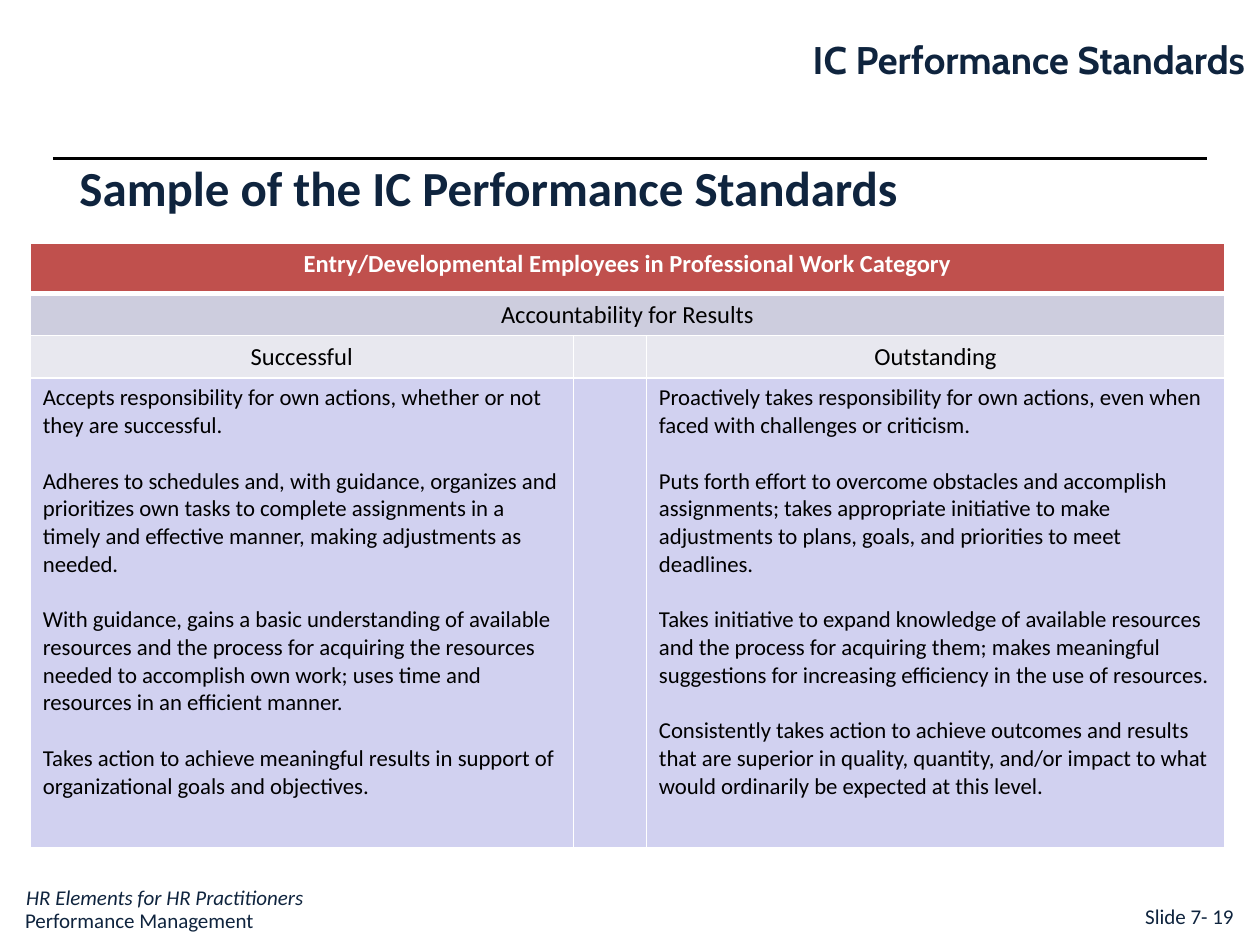
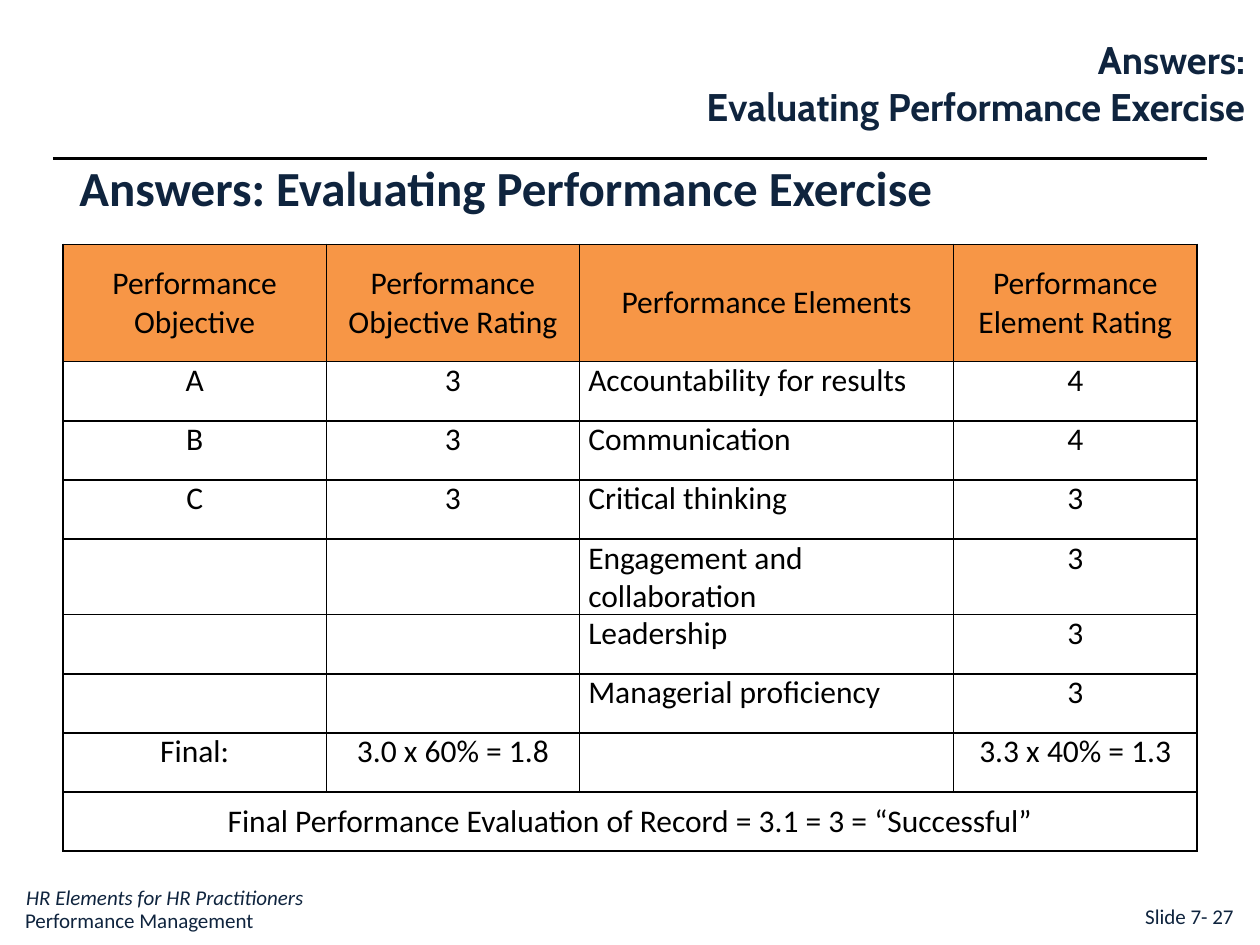
from lxml import etree
from pptx import Presentation
from pptx.dml.color import RGBColor
from pptx.enum.shapes import MSO_CONNECTOR
from pptx.enum.text import MSO_ANCHOR as Anchor, MSO_AUTO_SIZE as AutoSize, PP_ALIGN as Align
from pptx.oxml.ns import qn
from pptx.util import Pt

COLORS = {
    "navy": "0F243E",
    "black": "000000",
    "white": "FFFFFF",
    "red": "C0504D",
    "gray": "CDCDDE",
    "pale gray": "E8E8EF",
    "lavender": "D1D1F0",
    "orange": "F79646",
}
BODY_FONT = "Calibri"
HEADING_FONT = "Cabin"
HEADING_RIGHT = 718.6

SUCCESSFUL = [
    "Accepts responsibility for own actions, whether or not they are successful.",
    "Adheres to schedules and, with guidance, organizes and prioritizes own tasks to complete "
    "assignments in a timely and effective manner, making adjustments as needed.",
    "With guidance, gains a basic understanding of available resources and the process for "
    "acquiring the resources needed to accomplish own work; uses time and resources in an "
    "efficient manner.",
    "Takes action to achieve meaningful results in support of organizational goals and objectives.",
]
OUTSTANDING = [
    "Proactively takes responsibility for own actions, even when faced with challenges or criticism.",
    "Puts forth effort to overcome obstacles and accomplish assignments; takes appropriate "
    "initiative to make adjustments to plans, goals, and priorities to meet deadlines.",
    "Takes initiative to expand knowledge of available resources and the process for acquiring "
    "them; makes meaningful suggestions for increasing efficiency in the use of resources.",
    "Consistently takes action to achieve outcomes and results that are superior in quality, "
    "quantity, and/or impact to what would ordinarily be expected at this level.",
]
RATINGS = [
    ["Performance Objective", "Performance Objective Rating",
     "Performance Elements", "Performance Element Rating"],
    ["A", "3", "Accountability for results", "4"],
    ["B", "3", "Communication", "4"],
    ["C", "3", "Critical thinking", "3"],
    ["", "", "Engagement and collaboration", "3"],
    ["", "", "Leadership", "3"],
    ["", "", "Managerial proficiency", "3"],
    ["Final:", "3.0 x 60% = 1.8", "", "3.3 x 40% = 1.3"],
    ["Final Performance Evaluation of Record = 3.1 = 3 = “Successful”", "", "", ""],
]


def rgb(color):
    return RGBColor.from_string(COLORS[color])


def write(text_frame, text, size, color="navy", font=BODY_FONT, bold=False, italic=False,
          align=Align.LEFT, gap=0):
    """Fill a text frame; gap is the space between its paragraphs."""
    text_frame.text = text
    for index, paragraph in enumerate(text_frame.paragraphs):
        paragraph.alignment = align
        paragraph.space_before = Pt(gap if index else 0)
        for run in paragraph.runs:
            run.font.name = font
            run.font.size = Pt(size)
            run.font.bold = bold
            run.font.italic = italic
            run.font.color.rgb = rgb(color)


def add_text(slide, text, left, top, width, height, size, **style):
    box = slide.shapes.add_textbox(Pt(left), Pt(top), Pt(width), Pt(height))
    box.text_frame.word_wrap = True
    write(box.text_frame, text, size, **style)


def add_title(slide, text):
    title = slide.shapes.title
    title.left, title.top, title.width, title.height = Pt(38.2), Pt(77), Pt(577.4), Pt(50.4)
    title.text_frame.auto_size = AutoSize.NONE
    title.text_frame.vertical_anchor = Anchor.BOTTOM
    write(title.text_frame, text, 28, bold=True)


def add_rule(slide):
    rule = slide.shapes.add_connector(MSO_CONNECTOR.STRAIGHT, Pt(30.2), Pt(90.7), Pt(689.8), Pt(90.7))
    rule.line.color.rgb = rgb("black")
    rule.line.width = Pt(1.5)
    etree.SubElement(rule._element.spPr, qn("a:effectLst"))


def add_base_slide(presentation, heading, heading_width, title, number):
    """Add a slide with its corner heading, rule, title and footers."""
    slide = presentation.slides.add_slide(presentation.slide_layouts[5])
    add_rule(slide)
    add_title(slide, title)
    heading_height = 7.2 + 26.7 * len(heading.split("\n"))
    add_text(slide, heading, HEADING_RIGHT - heading_width, 17.3, heading_width, heading_height,
             22, font=HEADING_FONT, bold=True, align=Align.RIGHT)
    add_text(slide, "HR Elements for HR Practitioners", 7.9, 501.8, 175, 28.8, 12, italic=True)
    add_text(slide, "Performance Management", 7.2, 514.8, 159, 21.8, 12)
    add_text(slide, f"Slide 7- {number}", 647.3, 512.6, 71.3, 21.8, 12)
    return slide


def add_grid(slide, left, top, columns, rows):
    frame = slide.shapes.add_table(len(rows), len(columns), Pt(left), Pt(top),
                                   Pt(sum(columns)), Pt(sum(rows)))
    table = frame.table
    table.first_row = table.horz_banding = False
    for column, width in zip(table.columns, columns):
        column.width = Pt(width)
    for row, height in zip(table.rows, rows):
        row.height = Pt(height)
    return table


def set_borders(cell, color, **widths):
    """Draw the four borders, 1 pt unless a width is given for a side (L, R, T, B)."""
    properties = cell._tc.get_or_add_tcPr()
    for side in "LRTB":
        line = etree.SubElement(properties, qn(f"a:ln{side}"), w=str(Pt(widths.get(side, 1))))
        fill = etree.SubElement(line, qn("a:solidFill"))
        etree.SubElement(fill, qn("a:srgbClr"), val=COLORS[color])


def format_cell(cell, text, size, fill, side_margin, end_margin, anchor=Anchor.TOP, **style):
    cell.fill.solid()
    cell.fill.fore_color.rgb = rgb(fill)
    cell.margin_left = cell.margin_right = Pt(side_margin)
    cell.margin_top = cell.margin_bottom = Pt(end_margin if text else 0)
    cell.vertical_anchor = anchor
    if text:
        write(cell.text_frame, text, size, **style)


def add_standards_table(slide):
    table = add_grid(slide, 17.3, 139, [310.3, 41.8, 330.5], [28.8, 23, 23, 268.6])
    header = {"size": 14, "color": "black", "align": Align.CENTER}
    rows = [
        (["Entry/Developmental Employees in Professional Work Category", "", ""], "red",
         header | {"color": "white", "bold": True}),
        (["Accountability for Results", "", ""], "gray", header),
        (["Successful", "", "Outstanding"], "pale gray", header),
        (["\n".join(SUCCESSFUL), "", "\n".join(OUTSTANDING)], "lavender",
         {"size": 13, "color": "black", "gap": 15.9}),
    ]
    border_widths = [{"B": 3}, {"T": 3}, {}, {}]
    for row, (texts, fill, style) in enumerate(rows):
        for column, text in enumerate(texts):
            cell = table.cell(row, column)
            set_borders(cell, "white", **border_widths[row])
            format_cell(cell, text, fill=fill, side_margin=7.2, end_margin=3.6, **style)
    for row in (0, 1):
        table.cell(row, 0).merge(table.cell(row, 2))


def add_ratings_table(slide):
    last = len(RATINGS) - 1
    table = add_grid(slide, 36, 139.7, [150.5, 144.7, 213.8, 139], [67] + [33.8] * last)
    for row, texts in enumerate(RATINGS):
        for column, text in enumerate(texts):
            cell = table.cell(row, column)
            is_element = column == 2 and row > 0
            set_borders(cell, "black")
            format_cell(cell, text, 18, "white" if row else "orange", 5, 0,
                        anchor=Anchor.MIDDLE if row in (0, last) else Anchor.TOP,
                        color="black", align=Align.LEFT if is_element else Align.CENTER)
    table.cell(last, 0).merge(table.cell(last, 3))


def main():
    presentation = Presentation()
    presentation.slide_width, presentation.slide_height = Pt(720), Pt(540)

    # Sample standards
    slide = add_base_slide(presentation, "IC Performance Standards", 435,
                           "Sample of the IC Performance Standards", 19)
    add_standards_table(slide)

    # Exercise answers
    slide = add_base_slide(presentation, "Answers:\nEvaluating Performance Exercise", 476,
                           "Answers: Evaluating Performance Exercise", 27)
    add_ratings_table(slide)

    presentation.save("out.pptx")


if __name__ == "__main__":
    main()
